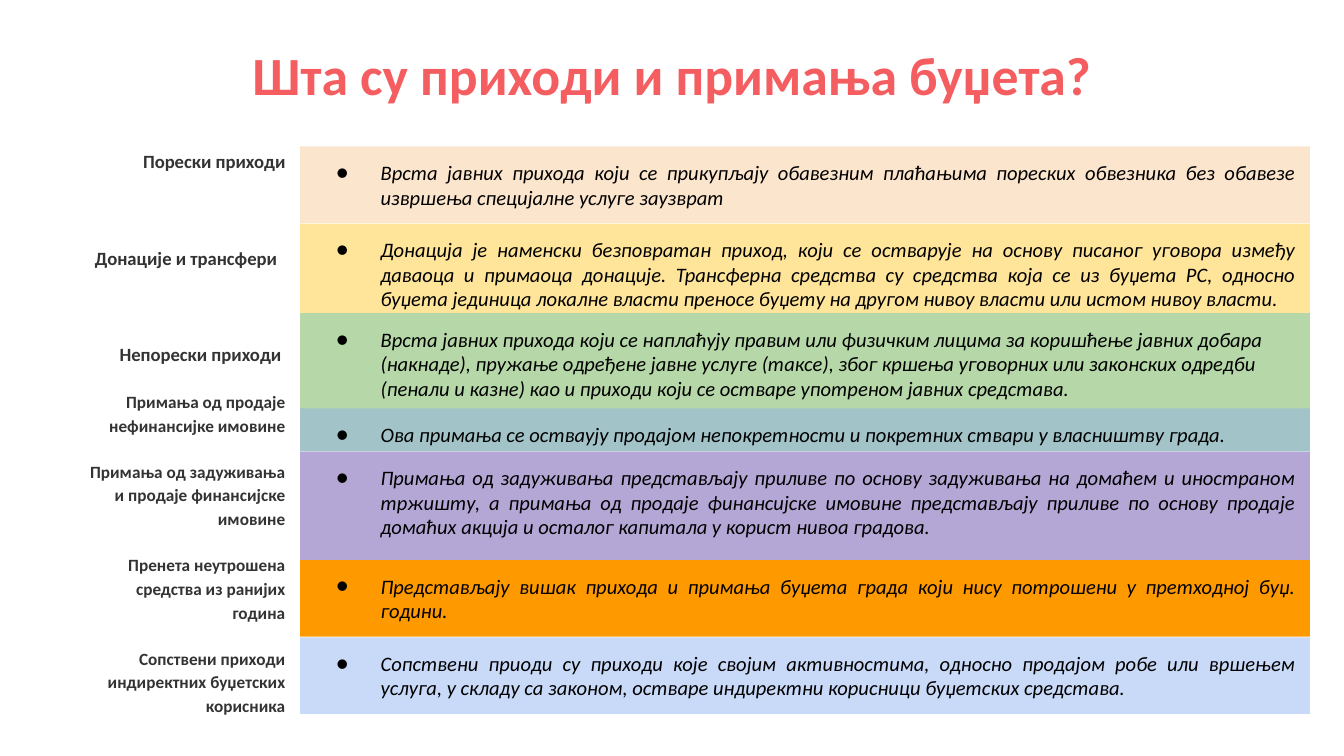
import pptx
import pptx.util
import pptx.dml.color
import pptx.enum.text
from lxml import etree

Pt = pptx.util.Pt
RGB = pptx.dml.color.RGBColor
Align = pptx.enum.text.PP_ALIGN
Anchor = pptx.enum.text.MSO_ANCHOR


class Theme:
    font = "Calibri"
    title, label, body = "F55E61", "333333", "000000"
    big, mid, text, small = 28.8, 10, 11, 9.2


def style(para, size, color, bold=False, italic=False):
    for run in para.runs:
        font = run.font
        font.name, font.size = Theme.font, Pt(size)
        font.bold, font.italic = bold, italic
        font.color.rgb = RGB.from_string(color)


def bullet(para):
    props = para._p.get_or_add_pPr()
    props.set("marL", str(Pt(36)))
    props.set("indent", str(-Pt(23.8)))
    space = "{http://schemas.openxmlformats.org/drawingml/2006/main}"
    color = etree.SubElement(props, space + "buClr")
    etree.SubElement(color, space + "srgbClr", val=Theme.body)
    etree.SubElement(props, space + "buFont", typeface=Theme.font)
    etree.SubElement(props, space + "buChar", char="●")


deck = pptx.Presentation()
deck.slide_width, deck.slide_height = Pt(720), Pt(405)
slide = deck.slides.add_slide(deck.slide_layouts[6])

# Title
box = slide.shapes.add_textbox(Pt(24.5), Pt(15.1), Pt(671), Pt(49))
frame = box.text_frame
frame.word_wrap = True
frame.vertical_anchor = Anchor.MIDDLE
frame.margin_left = frame.margin_right = 0
frame.margin_top = frame.margin_bottom = Pt(7.2)
frame.text = "Шта су приходи и примања буџета?"
frame.paragraphs[0].alignment = Align.CENTER
style(frame.paragraphs[0], Theme.big, Theme.title, bold=True)

# Coloured bands: top, height, fill, alignment, text
bands = [
    (78.5, 41, "FCE5CD", Align.JUSTIFY,
     "Врста јавних прихода који се прикупљају обавезним плаћањима пореских "
     "обвезника без обавезе извршења специјалне услуге заузврат"),
    (119.8, 54, "FFE599", Align.JUSTIFY,
     "Донација је наменски безповратан приход, који се остварује на основу "
     "писаног уговора између даваоца и примаоца донације. Трансферна средства "
     "су средства која се из буџета РС, односно буџета јединица локалне власти "
     "преносе буџету на другом нивоу власти или истом нивоу власти."),
    (167.8, 54, "B6D7A8", Align.LEFT,
     "Врста јавних прихода који се наплаћују правим или физичким лицима за "
     "коришћење јавних добара (накнаде), пружање одређене јавне услуге (таксе), "
     "због кршења уговорних или законских одредби (пенали и казне) као и "
     "приходи који се остваре употреном јавних средстава."),
    (218.8, 23, "A2C4C9", Align.JUSTIFY,
     "Ова примања се остваују продајом непокретности и покретних ствари у "
     "власништву града."),
    (241.9, 58.2, "B4A7D6", Align.JUSTIFY,
     "Примања од задуживања представљају приливе по основу задуживања на "
     "домаћем и иностраном тржишту, а примања од продаје финансијске имовине "
     "представљају приливе по основу продаје домаћих акција и осталог капитала "
     "у корист нивоа градова."),
    (300.1, 41, "FF9900", Align.JUSTIFY,
     "Представљају вишак прихода и примања буџета града који нису потрошени у "
     "претходној буџ. години."),
    (341.5, 41, "C9DAF8", Align.JUSTIFY,
     "Сопствени приоди су приходи које својим активностима, односно продајом "
     "робе или вршењем услуга, у складу са законом, остваре индиректни "
     "корисници буџетских средстава."),
]
for top, high, fill, align, text in bands:
    band = slide.shapes.add_shape(1, Pt(160.8), Pt(top), Pt(541), Pt(high))
    band.shadow.inherit = False
    band.fill.solid()
    band.fill.fore_color.rgb = RGB.from_string(fill)
    band.line.fill.background()
    frame = band.text_frame
    frame.word_wrap = True
    frame.vertical_anchor = Anchor.TOP
    frame.margin_left = frame.margin_right = Pt(7.2)
    frame.margin_top = frame.margin_bottom = Pt(7.2)
    frame.text = text
    para = frame.paragraphs[0]
    para.alignment = align
    bullet(para)
    style(para, Theme.text, Theme.body, italic=True)

# Row labels: text, size, space before, right indent
labels = [
    ("Порески приходи", Theme.mid, 0, 0),
    ("Донације и трансфери", Theme.mid, 38, 4.5),
    ("Непорески приходи", Theme.mid, 38, 2.25),
    ("Примања од продаје нефинансијке имовине", Theme.small, 12, 0),
    ("Примања од задуживања и продаје финансијске имовине", Theme.small, 12, 0),
    ("Пренета неутрошена средства из ранијих година", Theme.small, 12, 0),
    ("Сопствени приходи индиректних буџетских корисника", Theme.small, 12, 0),
]
box = slide.shapes.add_textbox(Pt(36), Pt(71.3), Pt(123.9), Pt(319))
frame = box.text_frame
frame.word_wrap = True
frame.margin_left = frame.margin_right = Pt(7.2)
frame.margin_top = frame.margin_bottom = Pt(7.2)
for num, (text, size, gap, inset) in enumerate(labels):
    para = frame.add_paragraph() if num else frame.paragraphs[0]
    para.text = text
    para.alignment = Align.RIGHT
    para.line_spacing = 1.15
    para.space_before = Pt(gap)
    para._p.get_or_add_pPr().set("marR", str(Pt(inset)))
    style(para, size, Theme.label, bold=True)

deck.save("out.pptx")
